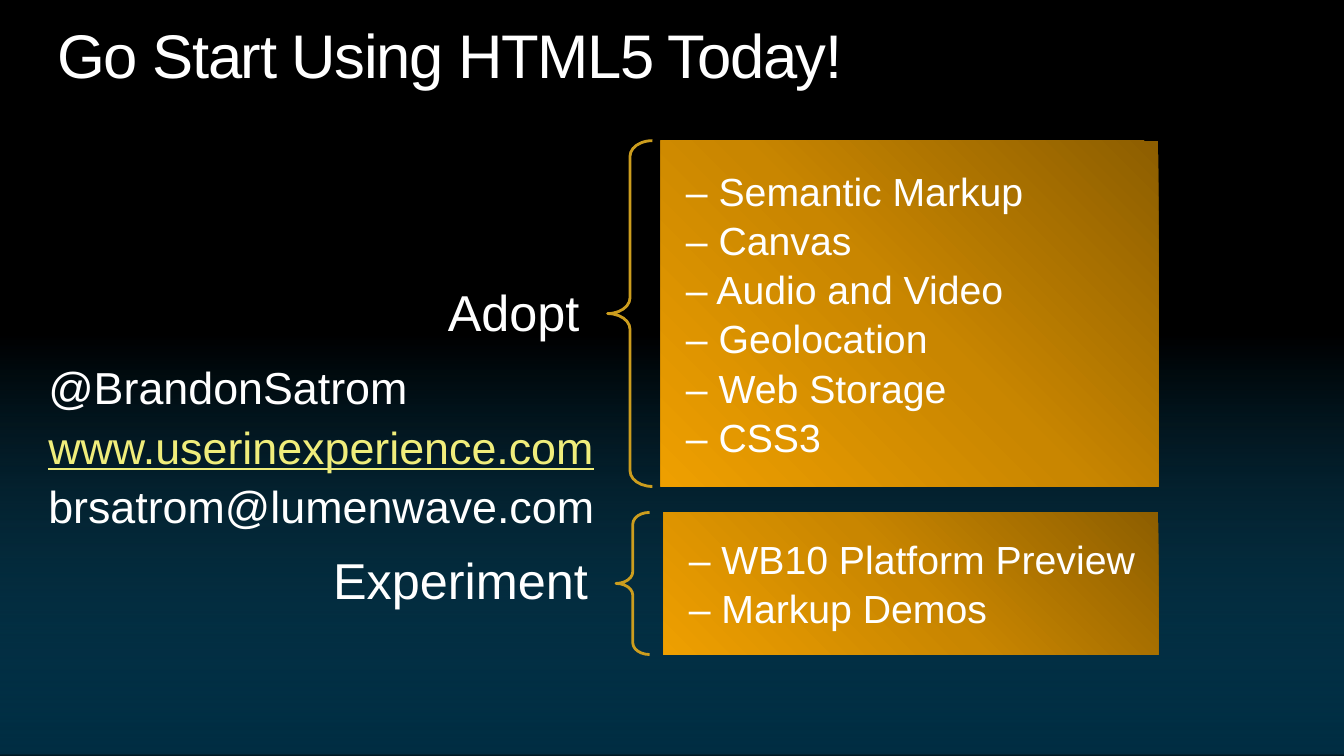
from dataclasses import dataclass

from lxml import etree
from pptx import Presentation
from pptx.dml.color import RGBColor
from pptx.enum.shapes import MSO_SHAPE
from pptx.enum.text import MSO_ANCHOR, MSO_AUTO_SIZE, PP_ALIGN
from pptx.oxml.ns import qn
from pptx.util import Pt

RECTANGLE, LEFT_BRACE = MSO_SHAPE.RECTANGLE, MSO_SHAPE.LEFT_BRACE
TOP, MIDDLE = MSO_ANCHOR.TOP, MSO_ANCHOR.MIDDLE
LEFT, RIGHT = PP_ALIGN.LEFT, PP_ALIGN.RIGHT
NO_AUTOFIT = MSO_AUTO_SIZE.NONE


@dataclass(frozen=True)
class Theme:
    font: str = "Arial"
    background: str = "000000"
    text: str = "FFFFFF"
    link: str = "F0ED7B"
    brace: str = "CC9D1E"
    glow: tuple = ((42, "0F74A1", 0), (100, "002D42", 100))
    gold: tuple = ((0, "8D5E00", 100), (50, "C98600", 100), (100, "EE9F00", 100))
    title_size: int = 44
    label_size: int = 36
    contact_size: int = 32
    item_size: int = 28


THEME = Theme()


def add_gradient_panel(left, top, width, height, stops, angle):
    """Add a borderless rectangle; each stop is (position %, colour, opacity %)."""
    panel = slide.shapes.add_shape(RECTANGLE, Pt(left), Pt(top), Pt(width), Pt(height))
    panel.shadow.inherit = False
    panel.line.fill.background()
    panel.fill.gradient()
    gradient = panel.fill._xPr.find(qn("a:gradFill"))
    for child in list(gradient):
        gradient.remove(child)
    stop_list = etree.SubElement(gradient, qn("a:gsLst"))
    for position, color, opacity in stops:
        stop = etree.SubElement(stop_list, qn("a:gs"), pos=str(position * 1000))
        rgb = etree.SubElement(stop, qn("a:srgbClr"), val=color)
        if opacity < 100:
            etree.SubElement(rgb, qn("a:alpha"), val=str(opacity * 1000))
    etree.SubElement(gradient, qn("a:lin"), ang=str(angle * 60000), scaled="0")
    return panel


def write_text(shape, lines, size, align=LEFT, anchor=TOP, margins=(0, 0, 0, 0),
               line_spacing=0.9, before=0, after=0, linked=()):
    """Fill a shape with paragraphs; margins run left, top, right, bottom."""
    frame = shape.text_frame
    frame.word_wrap = True
    frame.auto_size = NO_AUTOFIT
    frame.vertical_anchor = anchor
    (frame.margin_left, frame.margin_top,
     frame.margin_right, frame.margin_bottom) = map(Pt, margins)
    for index, line in enumerate(lines):
        paragraph = frame.paragraphs[0] if index == 0 else frame.add_paragraph()
        paragraph.alignment = align
        paragraph.line_spacing = line_spacing
        paragraph.space_before = Pt(before if index else 0)
        paragraph.space_after = Pt(after)
        run = paragraph.add_run()
        run.text = line
        run.font.name = THEME.font
        run.font.size = Pt(size)
        run.font.underline = line in linked
        run.font.color.rgb = RGBColor.from_string(
            THEME.link if line in linked else THEME.text)


presentation = Presentation()
presentation.slide_width, presentation.slide_height = Pt(960), Pt(540)
slide = presentation.slides.add_slide(presentation.slide_layouts[5])
slide.background.fill.solid()
slide.background.fill.fore_color.rgb = RGBColor.from_string(THEME.background)

add_gradient_panel(0, 21.6, 960, 518.4, THEME.glow, 90)

title = slide.shapes.title
title.left, title.top, title.width, title.height = Pt(41), Pt(18), Pt(878), Pt(48)
write_text(title, ["Go Start Using HTML5 Today!"], THEME.title_size)
title.text_frame.paragraphs[0].runs[0].font._element.set("spc", "-100")

# Label, items, label left, brace left, brace width, panel left, top, label top, height, label height
groups = [
    ("Adopt",
     ["– Semantic Markup", "– Canvas", "– Audio and Video",
      "– Geolocation", "– Web Storage", "– CSS3"],
     276, 434, 32, 472, 100.5, 175, 247, 100),
    ("Experiment",
     ["– WB10 Platform Preview", "– Markup Demos"],
     194, 440, 24, 474, 366, 366, 101.5, 101.5),
]
panel_right = 827.5

for (name, items, label_left, brace_left, brace_width, panel_left,
     top, label_top, height, label_height) in groups:
    label = slide.shapes.add_textbox(Pt(label_left), Pt(label_top),
                                     Pt(brace_left - label_left), Pt(label_height))
    write_text(label, [name], THEME.label_size, align=RIGHT, anchor=MIDDLE,
               margins=(20, 7, 20, 7))

    brace = slide.shapes.add_shape(LEFT_BRACE, Pt(brace_left), Pt(top),
                                   Pt(brace_width), Pt(height))
    brace.shadow.inherit = False
    brace.adjustments[0] = 0.35
    brace.fill.background()
    brace.line.color.rgb = RGBColor.from_string(THEME.brace)
    brace.line.width = Pt(2)

    panel = add_gradient_panel(panel_left, top, panel_right - panel_left, height,
                               THEME.gold, 135)
    write_text(panel, items, THEME.item_size, anchor=MIDDLE, margins=(18, 3.6, 0, 3.6),
               line_spacing=1, after=1.5)

website = "www.userinexperience.com"
contact = slide.shapes.add_textbox(Pt(34.5), Pt(261.5), Pt(734), Pt(120))
write_text(contact, ["@BrandonSatrom", website, "brsatrom@lumenwave.com"],
           THEME.contact_size, before=7.8, linked=(website,))

presentation.save("out.pptx")
